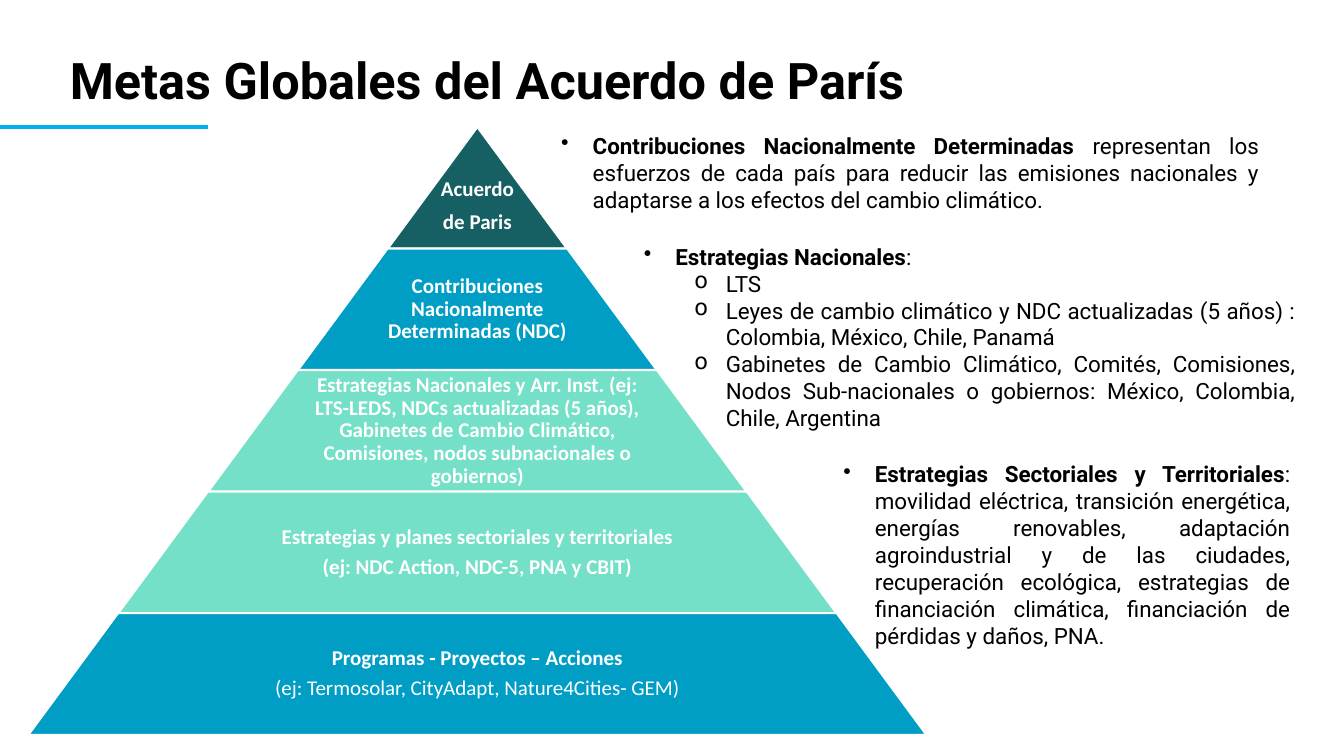
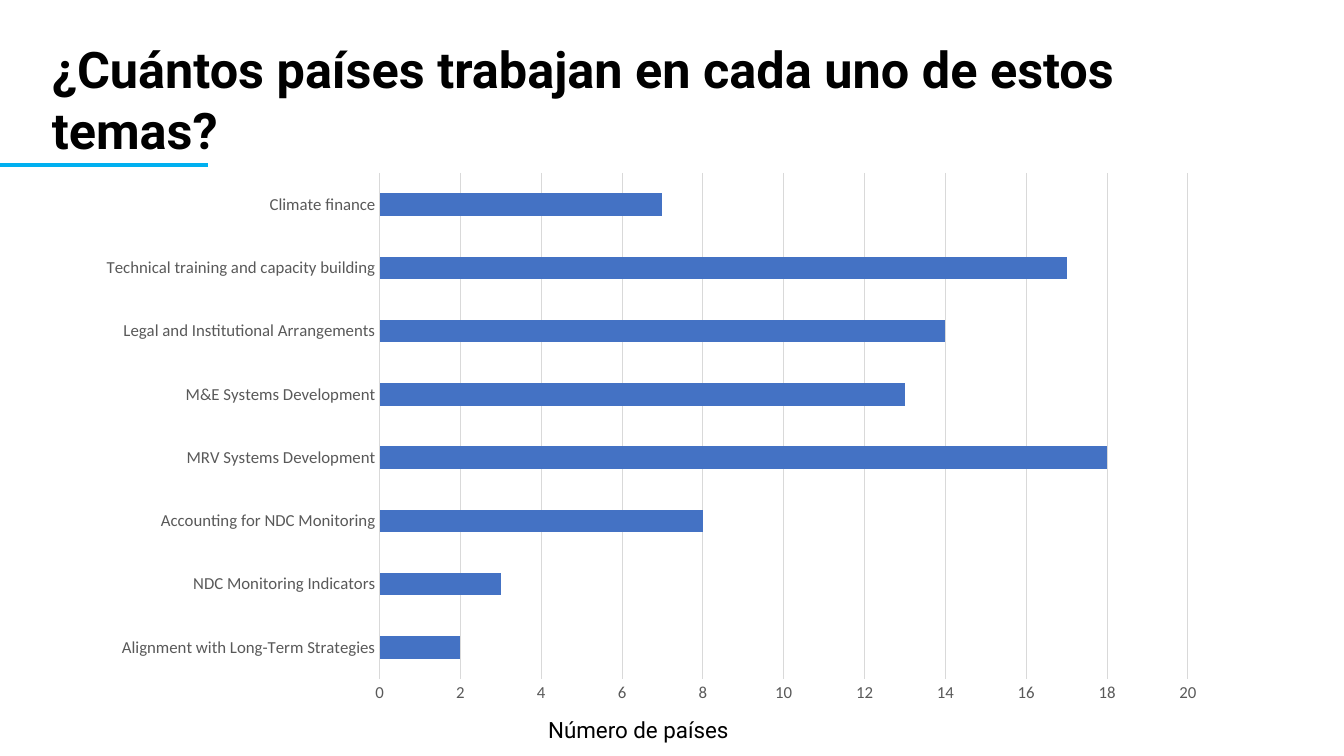
"""Build two slides on the Paris Agreement goals and the countries working on each topic."""
from dataclasses import dataclass
from typing import Any

from lxml import etree
from pptx import Presentation
from pptx.chart.data import CategoryChartData
from pptx.dml.color import RGBColor
from pptx.enum.chart import XL_CHART_TYPE, XL_TICK_MARK
from pptx.enum.shapes import MSO_CONNECTOR, MSO_SHAPE
from pptx.enum.text import MSO_ANCHOR, PP_ALIGN
from pptx.oxml.ns import qn
from pptx.slide import Slide
from pptx.util import Pt

BAR = XL_CHART_TYPE.BAR_CLUSTERED
NO_TICK = XL_TICK_MARK.NONE
STRAIGHT = MSO_CONNECTOR.STRAIGHT
TRAPEZOID = MSO_SHAPE.TRAPEZOID
TOP, MIDDLE = MSO_ANCHOR.TOP, MSO_ANCHOR.MIDDLE
LEFT, CENTER, JUSTIFY = PP_ALIGN.LEFT, PP_ALIGN.CENTER, PP_ALIGN.JUSTIFY


@dataclass(frozen=True)
class Theme:
    black: str = "000000"
    white: str = "FFFFFF"
    accent: str = "00B0F0"
    dark_teal: str = "166063"
    blue: str = "009EC5"
    mint: str = "74E0C7"
    bar: str = "4472C4"
    axis_text: str = "595959"
    grid: str = "D9D9D9"
    heading_font: str = "Roboto"
    diagram_font: str = "Calibri"
    title_size: float = 36
    body_size: float = 16
    tier_size: float = 15
    axis_size: float = 12


THEME = Theme()


@dataclass(frozen=True)
class Box:
    left: float
    top: float
    width: float
    height: float

    def points(self) -> tuple[Pt, Pt, Pt, Pt]:
        return Pt(self.left), Pt(self.top), Pt(self.width), Pt(self.height)


@dataclass(frozen=True)
class Run:
    text: str
    bold: bool = False


@dataclass(frozen=True)
class Para:
    runs: tuple[Run, ...]
    bullet: str = ""
    level: int = 0


@dataclass(frozen=True)
class TextStyle:
    font: str
    size: float
    color: str
    align: PP_ALIGN = LEFT
    spacing: float = 1.0
    after: float = 0


@dataclass(frozen=True)
class Tier:
    color: str
    paras: tuple[Para, ...]
    spacing: float = 0.9
    text_share: float = 0.65
    drop: float = 0


@dataclass(frozen=True)
class Note:
    box: Box
    paras: tuple[Para, ...]


def bold(text: str) -> Para:
    return Para((Run(text, True),))


def detail(text: str) -> Para:
    return Para((Run(text),), "o", 1)


PYRAMID_CENTER, PYRAMID_TOP = 341, 90.7
TIER_STEP, TIER_HEIGHT, TIER_PITCH = 128.3, 87, 86.8
TIER_INSET = 1.4
BULLET_INDENT, LEVEL_INDENT = 22.5, 36
RULE_LENGTH = 148.3

TIERS = (
    Tier(THEME.dark_teal, (bold("Acuerdo"), bold("de Paris")), 1.0, 1.0, 23.6),
    Tier(THEME.blue, (bold("Contribuciones Nacionalmente Determinadas (NDC)"),)),
    Tier(THEME.mint, (bold(
        "Estrategias Nacionales y Arr. Inst. (ej: LTS-LEDS, NDCs actualizadas (5 años), "
        "Gabinetes de Cambio Climático, Comisiones, nodos subnacionales o gobiernos)"),)),
    Tier(THEME.mint, (bold("Estrategias y planes sectoriales y territoriales"),
                      bold("(ej: NDC Action, NDC-5, PNA y CBIT)"))),
    Tier(THEME.blue, (bold("Programas - Proyectos – Acciones"),
                      Para((Run("(ej: Termosolar, CityAdapt, Nature4Cities- GEM)"),)))),
)

NOTES = (
    Note(Box(393.8, 90.7, 512.6, 65.5), (
        Para((Run("Contribuciones Nacionalmente Determinadas ", True),
              Run("representan los esfuerzos de cada país para reducir las emisiones "
                  "nacionales y adaptarse a los efectos del cambio climático.")), "•"),)),
    Note(Box(452.9, 170, 479.5, 143.3), (
        Para((Run("Estrategias Nacionales", True), Run(":")), "•"),
        detail("LTS"),
        detail("Leyes de cambio climático y NDC actualizadas (5 años) : "
               "Colombia, México, Chile, Panamá"),
        detail("Gabinetes de Cambio Climático, Comités, Comisiones, Nodos Sub-nacionales "
               "o gobiernos: México, Colombia, Chile, Argentina"))),
    Note(Box(595.4, 325.4, 333.4, 162.7), (
        Para((Run("Estrategias Sectoriales y Territoriales", True),
              Run(": movilidad eléctrica, transición energética, energías renovables, "
                  "adaptación agroindustrial y de las ciudades, recuperación ecológica, "
                  "estrategias de financiación climática, financiación de pérdidas y "
                  "daños, PNA.")), "•"),)),
)

COUNTRIES_BY_TOPIC = {
    "Alignment with Long-Term Strategies": 2,
    "NDC Monitoring Indicators": 3,
    "Accounting for NDC Monitoring": 8,
    "MRV Systems Development": 18,
    "M&E Systems Development": 13,
    "Legal and Institutional Arrangements": 14,
    "Technical training and capacity building": 17,
    "Climate finance": 7,
}


def apply(target: Any, formats: dict[str, Any]) -> None:
    for name, value in formats.items():
        setattr(target, name, value)


def set_font(font: Any, name: str, size: float, color: str, is_bold: bool = False) -> None:
    apply(font, {"name": name, "size": Pt(size), "bold": is_bold})
    font.color.rgb = RGBColor.from_string(color)


def set_line(line: Any, color: str, width: float) -> None:
    line.color.rgb = RGBColor.from_string(color)
    line.width = Pt(width)


def add_bullet(paragraph: Any, mark: str, level: int) -> None:
    props = paragraph._p.get_or_add_pPr()
    props.set("marL", str(Pt(BULLET_INDENT + LEVEL_INDENT * level)))
    props.set("indent", str(-Pt(BULLET_INDENT)))
    etree.SubElement(props, qn("a:buChar")).set("char", mark)


def add_text(slide: Slide, box: Box, paras: tuple[Para, ...], style: TextStyle,
             frame_formats: dict[str, Any] | None = None) -> None:
    frame = slide.shapes.add_textbox(*box.points()).text_frame
    apply(frame, {"word_wrap": True, **(frame_formats or {})})
    for index, para in enumerate(paras):
        paragraph = frame.add_paragraph() if index else frame.paragraphs[0]
        apply(paragraph, {"alignment": style.align, "line_spacing": style.spacing,
                          "space_after": Pt(style.after), "level": para.level})
        if para.bullet:
            add_bullet(paragraph, para.bullet, para.level)
        for part in para.runs:
            run = paragraph.add_run()
            run.text = part.text
            set_font(run.font, style.font, style.size, style.color, part.bold)


def add_heading(slide: Slide, title: str, box: Box, rule_top: float,
                anchor: MSO_ANCHOR = TOP, spacing: float = 1.0) -> None:
    style = TextStyle(THEME.heading_font, THEME.title_size, THEME.black, spacing=spacing)
    add_text(slide, box, (bold(title),), style, {"vertical_anchor": anchor})
    rule = slide.shapes.add_connector(STRAIGHT, Pt(0), Pt(rule_top),
                                      Pt(RULE_LENGTH), Pt(rule_top))
    set_line(rule.line, THEME.accent, 3)
    etree.SubElement(rule._element.spPr, qn("a:effectLst"))


def add_tier(slide: Slide, index: int, tier: Tier) -> None:
    width = TIER_STEP * (index + 1)
    top = PYRAMID_TOP + TIER_PITCH * index
    outline = Box(PYRAMID_CENTER - width / 2, top, width, TIER_HEIGHT)
    band = slide.shapes.add_shape(TRAPEZOID, *outline.points())
    band.adjustments[0] = TIER_STEP / 2 / TIER_HEIGHT
    band.shadow.inherit = False
    band.fill.solid()
    band.fill.fore_color.rgb = RGBColor.from_string(tier.color)
    set_line(band.line, THEME.white, 1.5)

    text_width = width * tier.text_share
    label = Box(PYRAMID_CENTER - text_width / 2, top, text_width, TIER_HEIGHT)
    style = TextStyle(THEME.diagram_font, THEME.tier_size, THEME.white, CENTER,
                      tier.spacing, THEME.tier_size * 0.35)
    inset = Pt(TIER_INSET)
    add_text(slide, label, tier.paras, style, {
        "vertical_anchor": MIDDLE, "margin_left": inset, "margin_right": inset,
        "margin_top": Pt(TIER_INSET + tier.drop), "margin_bottom": inset})


def set_plot_area(chart: Any, **fractions: float) -> None:
    plot_area = chart._chartSpace.chart.plotArea
    for old in plot_area.findall(qn("c:layout")):
        plot_area.remove(old)
    layout = etree.Element(qn("c:layout"))
    plot_area.insert(0, layout)
    manual = etree.SubElement(layout, qn("c:manualLayout"))
    settings = {"layoutTarget": "inner", "xMode": "edge", "yMode": "edge", **fractions}
    for name, value in settings.items():
        etree.SubElement(manual, qn(f"c:{name}")).set("val", str(value))


def add_topic_chart(slide: Slide, box: Box) -> None:
    data = CategoryChartData()
    data.categories = list(COUNTRIES_BY_TOPIC)
    data.add_series("Series 1", list(COUNTRIES_BY_TOPIC.values()))
    chart = slide.shapes.add_chart(BAR, *box.points(), data).chart
    apply(chart, {"has_legend": False, "has_title": False})
    set_font(chart.font, THEME.diagram_font, THEME.axis_size, THEME.axis_text)
    apply(chart.plots[0], {"gap_width": 182, "vary_by_categories": False})
    fill = chart.plots[0].series[0].format.fill
    fill.solid()
    fill.fore_color.rgb = RGBColor.from_string(THEME.bar)

    topics, counts = chart.category_axis, chart.value_axis
    for axis in (topics, counts):
        apply(axis, {"major_tick_mark": NO_TICK, "minor_tick_mark": NO_TICK})
        set_font(axis.tick_labels.font, THEME.diagram_font, THEME.axis_size, THEME.axis_text)
    apply(counts, {"minimum_scale": 0, "maximum_scale": 20, "major_unit": 2,
                   "has_major_gridlines": True})
    set_line(topics.format.line, THEME.grid, 0.75)
    set_line(counts.major_gridlines.format.line, THEME.grid, 0.75)
    counts.format.line.fill.background()
    set_plot_area(chart, x=0.26, y=0.03, w=0.72, h=0.91)


def build_goals(slide: Slide) -> None:
    for index, tier in enumerate(TIERS):
        add_tier(slide, index, tier)
    add_heading(slide, "Metas Globales del Acuerdo de París",
                Box(42.8, 13.7, 788, 92), 90.7, MIDDLE, 0.9)
    style = TextStyle(THEME.heading_font, THEME.body_size, THEME.black, JUSTIFY)
    for note in NOTES:
        add_text(slide, note.box, note.paras, style)


def build_topics(slide: Slide) -> None:
    add_topic_chart(slide, Box(62.6, 111.6, 802, 397.4))
    add_heading(slide, "¿Cuántos países trabajan en cada uno de estos temas?",
                Box(30, 23.8, 890, 94.3), 118)
    style = TextStyle(THEME.heading_font, THEME.body_size, THEME.black)
    add_text(slide, Box(384.5, 508.3, 230, 26.6), (Para((Run("Número de países"),)),), style)


def main() -> None:
    deck = Presentation()
    apply(deck, {"slide_width": Pt(960), "slide_height": Pt(540)})
    for build in (build_goals, build_topics):
        build(deck.slides.add_slide(deck.slide_layouts[6]))
    deck.save("out.pptx")


if __name__ == "__main__":
    main()
